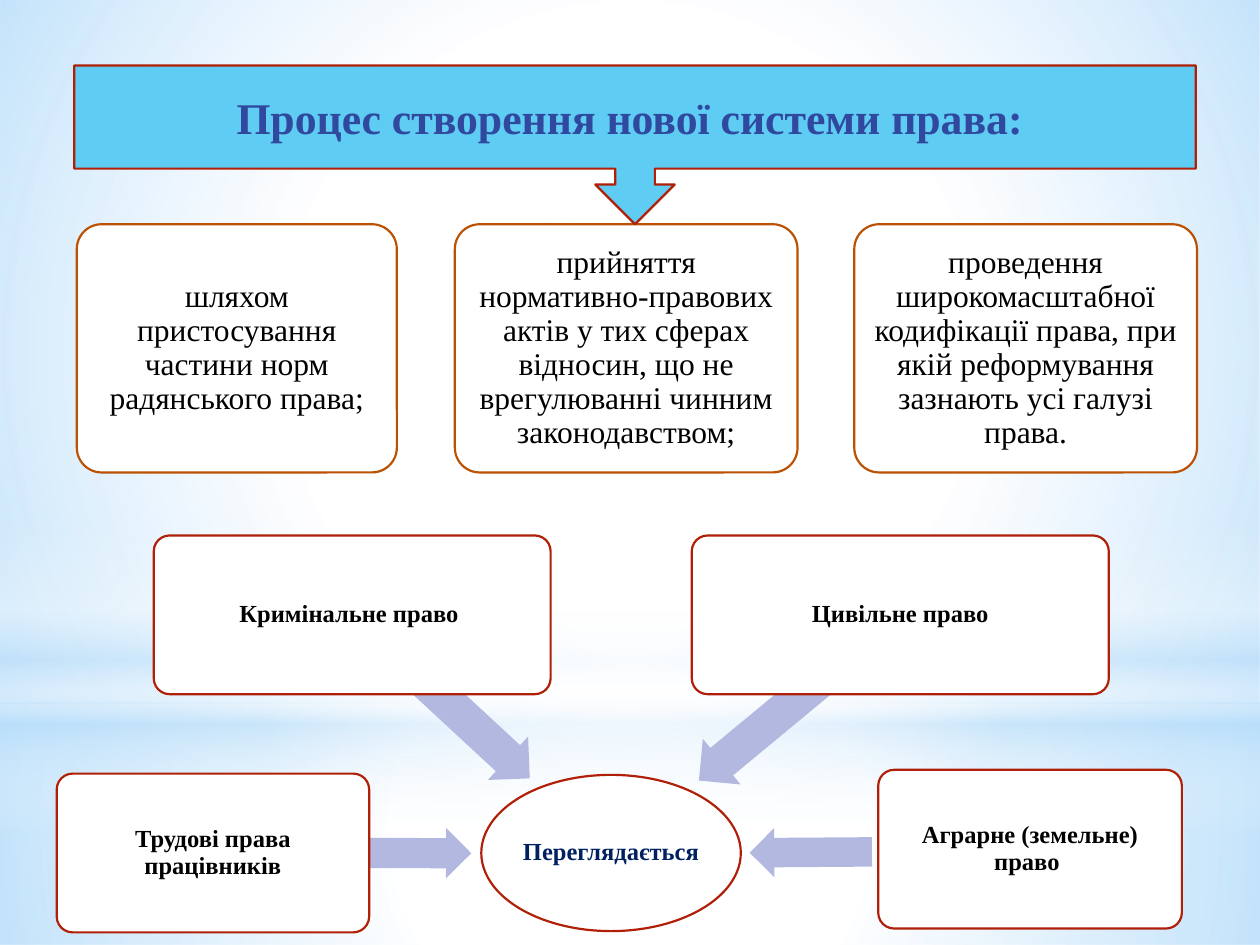
from lxml import etree
from pptx import Presentation
from pptx.dml.color import RGBColor
from pptx.enum.shapes import MSO_SHAPE
from pptx.enum.text import MSO_ANCHOR, PP_ALIGN
from pptx.oxml.ns import qn
from pptx.util import Inches, Pt

RECT = MSO_SHAPE.RECTANGLE
ROUNDED = MSO_SHAPE.ROUNDED_RECTANGLE
OVAL = MSO_SHAPE.OVAL
CALLOUT = MSO_SHAPE.DOWN_ARROW_CALLOUT
LEFT_ARROW = MSO_SHAPE.LEFT_ARROW
MIDDLE = MSO_ANCHOR.MIDDLE
CENTER = PP_ALIGN.CENTER

COLORS = {
    "white": "FFFFFF", "haze": "B4DCFA", "black": "000000",
    "sky": "5ECCF3", "indigo": "31489F", "navy": "002060",
    "orange": "BB5203", "red": "B01F07", "lilac": "B2B8E0",
}
FONT = "Times New Roman"
COLUMNS, ROWS = 100, 75


def rgb(name):
    return RGBColor.from_string(COLORS[name])


def write(shape, text, size=14, color="black", bold=True, spacing=0.9, inset=0.03):
    frame = shape.text_frame
    frame.word_wrap = True
    frame.vertical_anchor = MIDDLE
    if inset is not None:
        frame.margin_left = frame.margin_right = Inches(inset)
        frame.margin_top = frame.margin_bottom = Inches(inset)
    paragraph = frame.paragraphs[0]
    paragraph.alignment = CENTER
    paragraph.line_spacing = spacing
    run = paragraph.add_run()
    run.text = text
    run.font.name = FONT
    run.font.size = Pt(size)
    run.font.bold = bold
    run.font.color.rgb = rgb(color)


class SlideBuilder:
    def __init__(self, deck):
        self.slide = deck.slides.add_slide(deck.slide_layouts[6])
        self.column = deck.slide_width / COLUMNS
        self.row = deck.slide_height / ROWS

    def shape(self, kind, area, fill=None, line=None, adjust=()):
        left, top, width, height = area
        shape = self.slide.shapes.add_shape(
            kind, round(left * self.column), round(top * self.row),
            round(width * self.column), round(height * self.row))
        shape.shadow.inherit = False
        for index, value in enumerate(adjust):
            shape.adjustments[index] = value
        if fill:
            shape.fill.solid()
            shape.fill.fore_color.rgb = rgb(fill)
        else:
            shape.fill.background()
        if line:
            shape.line.color.rgb = rgb(line)
            shape.line.width = Pt(1.25)
        else:
            shape.line.fill.background()
        return shape

    def glow(self, kind, area, stops, angle=None):
        properties = self.shape(kind, area).element.spPr
        gradient = etree.Element(qn("a:gradFill"), rotWithShape="1")
        stop_list = etree.SubElement(gradient, qn("a:gsLst"))
        for position, color, opacity in stops:
            stop = etree.SubElement(stop_list, qn("a:gs"), pos=str(position * 1000))
            tint = etree.SubElement(stop, qn("a:srgbClr"), val=COLORS[color])
            etree.SubElement(tint, qn("a:alpha"), val=str(opacity * 1000))
        if angle is None:
            circle = etree.SubElement(gradient, qn("a:path"), path="circle")
            etree.SubElement(circle, qn("a:fillToRect"),
                             l="50000", t="50000", r="50000", b="50000")
        else:
            etree.SubElement(gradient, qn("a:lin"), ang=str(angle * 60000), scaled="0")
        properties.replace(properties.find(qn("a:noFill")), gradient)

    def card(self, area, text, line="red", **text_format):
        card = self.shape(ROUNDED, area, "white", line, (0.1,))
        write(card, text, **text_format)

    def arrow(self, area, rotation):
        arrow = self.shape(LEFT_ARROW, area, "lilac", adjust=(0.6, 0.5))
        arrow.rotation = rotation


def main():
    deck = Presentation()
    deck.slide_width, deck.slide_height = Inches(10), Inches(7.5)
    page = SlideBuilder(deck)

    horizon = 55.8
    page.glow(RECT, (0, horizon, COLUMNS, ROWS - horizon),
              [(0, "white", 91), (37, "white", 76), (100, "haze", 79)])
    page.glow(RECT, (0, 0, COLUMNS, horizon),
              [(0, "white", 89), (48, "white", 62), (100, "haze", 79)])
    page.glow(RECT, (0, 41.2, COLUMNS, 25),
              [(0, "white", 0), (29, "white", 30), (45, "haze", 40),
               (55, "white", 26), (65, "haze", 60), (100, "white", 0)], angle=90)
    page.glow(OVAL, (0, 17.5, COLUMNS, horizon), [(0, "white", 100), (56, "white", 0)])

    ways = [
        (6.1, 25.4, "шляхом пристосування частини норм радянського права;"),
        (36.1, 27.2, "прийняття нормативно-правових актів у тих сферах відносин, "
                     "що не врегулюванні чинним законодавством;"),
        (67.8, 27.2, "проведення широкомасштабної кодифікації права, "
                     "при якій реформування зазнають усі галузі права."),
    ]
    for left, width, way in ways:
        page.card((left, 17.8, width, 19.7), way, line="orange",
                  size=18, bold=False, inset=0.07)

    title = page.shape(CALLOUT, (5.9, 5.2, 89, 12.6), "sky", "red")
    write(title, "Процес створення нової системи права: ", size=25,
          color="indigo", spacing=1, inset=None)

    review = page.shape(OVAL, (38.2, 61.5, 20.6, 12.4), "white", "red")
    write(review, "Переглядається", color="navy", inset=0.01)

    branches = [
        ("Трудові права працівників", (4.5, 61.4, 24.8), (26.6, 65.7, 10.8, 4), 180.2),
        ("Аграрне (земельне) право ", (69.7, 61.1, 24.1), (59.5, 65.7, 9.7, 3.9), 359.6),
        ("Кримінальне право ", (12.2, 42.5, 31.5), (25.4, 52.9, 19.2, 4.7), 222.8),
        ("Цивільне право", (54.9, 42.5, 33.1), (53.1, 53, 20.7, 4.7), 320.4),
    ]
    for branch, place, arrow_area, rotation in branches:
        page.arrow(arrow_area, rotation)
        page.card((*place, 12.6), branch)

    deck.save("out.pptx")


if __name__ == "__main__":
    main()
